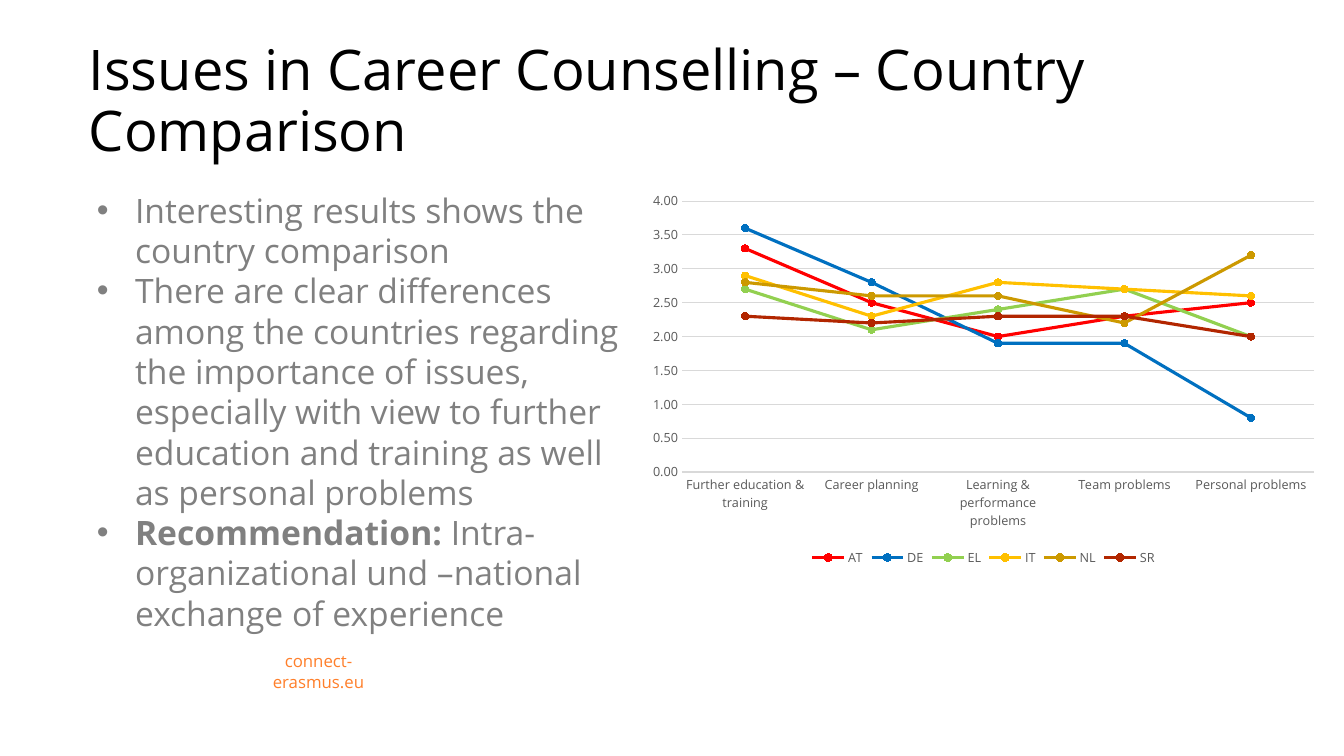
import pptx
import pptx.chart.data
import pptx.dml.color
import pptx.enum.chart
import pptx.enum.text
import pptx.oxml
import pptx.oxml.ns
import pptx.util

Inches = pptx.util.Inches
Pt = pptx.util.Pt

FONT = "Open Sans"
COLORS = {
    "title": "000000", "body": "808080", "footer": "FF7F2A",
    "axis": "595959", "grid": "D9D9D9",
    "AT": "FF0000", "DE": "0070C0", "EL": "92D050",
    "IT": "FFC000", "NL": "CC9900", "SR": "B22600",
}
TITLE = "Issues in Career Counselling – Country Comparison"
BULLETS = [
    [("Interesting results shows the country comparison", False)],
    [("There are clear differences among the countries regarding the importance "
      "of issues, especially with view to further education and training as well "
      "as personal problems", False)],
    [("Recommendation: ", True),
     ("Intra-organizational und –national exchange of experience", False)],
]
FOOTER = "connect-erasmus.eu"
ISSUES = ["Further education & training", "Career planning",
          "Learning & performance problems", "Team problems", "Personal problems"]
COUNTRIES = {
    "AT": (3.3, 2.5, 2, 2.3, 2.5),
    "DE": (3.6, 2.8, 1.9, 1.9, 0.8),
    "EL": (2.7, 2.1, 2.4, 2.7, 2),
    "IT": (2.9, 2.3, 2.8, 2.7, 2.6),
    "NL": (2.8, 2.6, 2.6, 2.2, 3.2),
    "SR": (2.3, 2.2, 2.3, 2.3, 2),
}
CONTENT_TOP = 1.83
COLUMN_SPLIT = 6.34
BODY_LEFT = 0.86
AREAS = {
    "title": (0.78, 0.07, 11.69, 1.6),
    "body": (BODY_LEFT, CONTENT_TOP, COLUMN_SPLIT - BODY_LEFT, 4.45),
    "footer": (2.28, 6.51, 1.76, 0.3),
    "chart": (COLUMN_SPLIT, CONTENT_TOP, 6.83, 3.83),
}


def area(name):
    return [Inches(length) for length in AREAS[name]]


def rgb(name):
    return pptx.dml.color.RGBColor.from_string(COLORS[name])


def style_font(font, size, color):
    font.name = FONT
    font.size = Pt(size)
    font.color.rgb = rgb(color)


def place(shape, name, anchor):
    shape.left, shape.top, shape.width, shape.height = area(name)
    frame = shape.text_frame
    frame.word_wrap = True
    frame.auto_size = pptx.enum.text.MSO_AUTO_SIZE.NONE
    frame.vertical_anchor = anchor
    return frame


def add_bullet(paragraph):
    properties = paragraph._p.get_or_add_pPr()
    properties.set("marL", str(Inches(0.38)))
    properties.set("indent", str(-Inches(0.38)))
    for tag, attribute, value in (("a:buFont", "typeface", "Arial"),
                                  ("a:buChar", "char", "•")):
        element = pptx.oxml.parse_xml(
            f'<{tag} {pptx.oxml.ns.nsdecls("a")} {attribute}="{value}"/>')
        properties.append(element)


def fill_title(slide):
    frame = place(slide.shapes.title, "title", pptx.enum.text.MSO_ANCHOR.BOTTOM)
    frame.text = TITLE
    paragraph = frame.paragraphs[0]
    paragraph.alignment = pptx.enum.text.PP_ALIGN.LEFT
    paragraph.line_spacing = 0.9
    style_font(paragraph.font, 40, "title")


def fill_body(slide):
    frame = place(slide.placeholders[1], "body", pptx.enum.text.MSO_ANCHOR.TOP)
    for index, runs in enumerate(BULLETS):
        paragraph = frame.add_paragraph() if index else frame.paragraphs[0]
        add_bullet(paragraph)
        paragraph.line_spacing = 1.0
        paragraph.space_before = Pt(0)
        style_font(paragraph.font, 24, "body")
        for text, bold in runs:
            run = paragraph.add_run()
            run.text = text
            run.font.bold = bold


def add_footer(slide):
    box = slide.shapes.add_textbox(*area("footer"))
    frame = place(box, "footer", pptx.enum.text.MSO_ANCHOR.MIDDLE)
    frame.text = FOOTER
    paragraph = frame.paragraphs[0]
    paragraph.alignment = pptx.enum.text.PP_ALIGN.CENTER
    style_font(paragraph.font, 12, "footer")


def style_axis(axis):
    axis.major_tick_mark = pptx.enum.chart.XL_TICK_MARK.NONE
    axis.minor_tick_mark = pptx.enum.chart.XL_TICK_MARK.NONE
    style_font(axis.tick_labels.font, 9, "axis")


def style_grid_line(line):
    line.color.rgb = rgb("grid")
    line.width = Pt(0.75)


def add_country_chart(slide):
    data = pptx.chart.data.CategoryChartData(number_format="###0.00")
    data.categories = ISSUES
    for country, values in COUNTRIES.items():
        data.add_series(country, values)
    chart = slide.shapes.add_chart(
        pptx.enum.chart.XL_CHART_TYPE.LINE_MARKERS, *area("chart"), data).chart
    style_font(chart.font, 10, "title")
    chart.has_title = False
    chart.has_legend = True
    chart.legend.position = pptx.enum.chart.XL_LEGEND_POSITION.BOTTOM
    chart.legend.include_in_layout = False
    style_font(chart.legend.font, 9, "axis")

    style_axis(chart.category_axis)
    style_grid_line(chart.category_axis.format.line)
    value_axis = chart.value_axis
    style_axis(value_axis)
    value_axis.minimum_scale, value_axis.maximum_scale = 0, 4
    value_axis.major_unit = 0.5
    value_axis.tick_labels.number_format = "###0.00"
    value_axis.tick_labels.number_format_is_linked = False
    value_axis.format.line.fill.background()
    value_axis.has_major_gridlines = True
    style_grid_line(value_axis.major_gridlines.format.line)

    plot = chart.plots[0]
    plot.vary_by_categories = False
    for series in plot.series:
        color = rgb(series.name)
        series.smooth = False
        series.format.line.color.rgb = color
        series.format.line.width = Pt(2.25)
        marker = series.marker
        marker.style = pptx.enum.chart.XL_MARKER_STYLE.CIRCLE
        marker.size = 5
        marker.format.fill.solid()
        marker.format.fill.fore_color.rgb = color
        marker.format.line.color.rgb = color


def main():
    presentation = pptx.Presentation()
    presentation.slide_width = Inches(13.33)
    presentation.slide_height = Inches(7.5)
    slide = presentation.slides.add_slide(presentation.slide_layouts[1])
    fill_title(slide)
    fill_body(slide)
    add_footer(slide)
    add_country_chart(slide)
    presentation.save("out.pptx")


if __name__ == "__main__":
    main()
